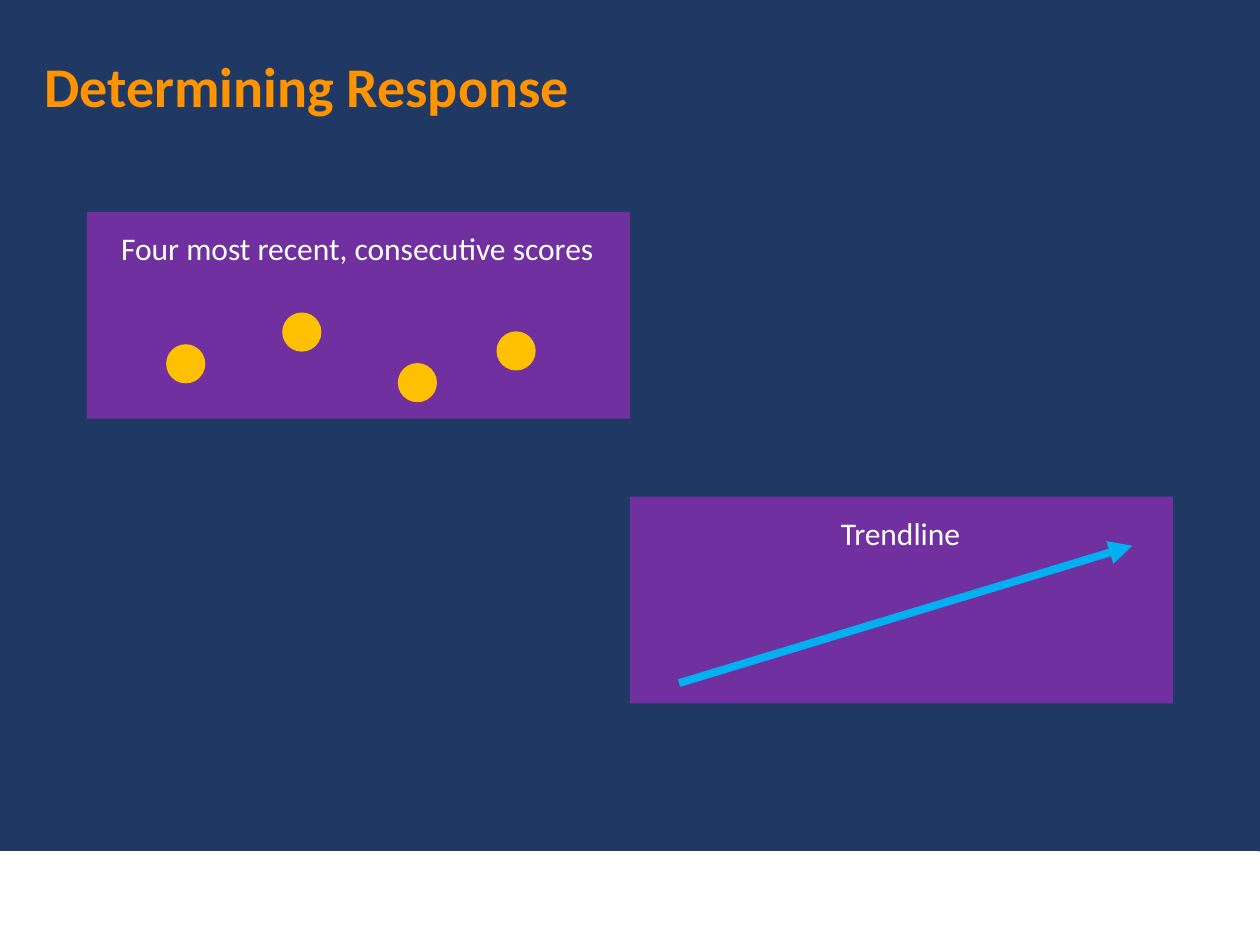
from lxml import etree
from pptx import Presentation
from pptx.dml.color import RGBColor
from pptx.enum import shapes, text
from pptx.oxml import ns
from pptx.util import Cm, Pt

NAVY = RGBColor(0x20, 0x38, 0x64)
ORANGE = RGBColor(0xFF, 0x93, 0x00)
PURPLE = RGBColor(0x70, 0x30, 0xA0)
GOLD = RGBColor(0xFF, 0xC0, 0x00)
BLUE = RGBColor(0x00, 0xB0, 0xF0)
WHITE = RGBColor(0xFF, 0xFF, 0xFF)
FONT = "Calibri"
PANEL_WIDTH, PANEL_HEIGHT = 10.95, 4.17
DOT_SIZE = 0.79
DOT_OFFSETS = [(1.6, 2.67), (3.94, 2.03), (6.27, 3.05), (8.26, 2.41)]


def add_filled_shape(container, kind, left, top, width, height, color):
    """Add a flat shape without outline, measured in centimetres."""
    shape = container.add_shape(kind, Cm(left), Cm(top), Cm(width), Cm(height))
    shape.shadow.inherit = False
    shape.fill.solid()
    shape.fill.fore_color.rgb = color
    shape.line.fill.background()
    return shape


def style_font(paragraph, size, color, bold=False):
    """Format every run of a paragraph."""
    for run in paragraph.runs:
        run.font.name = FONT
        run.font.size = Pt(size)
        run.font.bold = bold
        run.font.color.rgb = color


def add_title(slide, left, top, width, height):
    """Place and format the title placeholder."""
    title = slide.shapes.title
    title.left, title.top, title.width, title.height = map(Cm, (left, top, width, height))
    title.fill.solid()
    title.fill.fore_color.rgb = NAVY
    frame = title.text_frame
    frame.text = "Determining Response"
    frame.vertical_anchor = text.MSO_ANCHOR.MIDDLE
    paragraph = frame.paragraphs[0]
    paragraph.alignment = text.PP_ALIGN.LEFT
    paragraph.line_spacing = 1.1
    style_font(paragraph, 32, ORANGE, bold=True)


def add_footer_band(slide, left, top, width, height):
    """Draw the white band along the bottom edge."""
    band = add_filled_shape(slide.shapes, shapes.MSO_SHAPE.RECTANGLE,
                            left, top, width, height, WHITE)
    band.line.color.rgb = WHITE
    band.line.width = Pt(1)


def add_panel(slide, left, top, caption):
    """Add a grouped purple panel with a caption and return its shapes."""
    panel = slide.shapes.add_group_shape().shapes
    add_filled_shape(panel, shapes.MSO_SHAPE.RECTANGLE,
                     left, top, PANEL_WIDTH, PANEL_HEIGHT, PURPLE)
    label = panel.add_textbox(Cm(left + 0.38), Cm(top + 0.23),
                              Cm(PANEL_WIDTH - 0.8), Cm(1.02))
    label.text_frame.word_wrap = True
    label.text_frame.text = caption
    paragraph = label.text_frame.paragraphs[0]
    paragraph.alignment = text.PP_ALIGN.CENTER
    style_font(paragraph, 18, WHITE)
    return panel


def add_scores_panel(slide, left, top):
    """Draw the panel with the four score dots."""
    panel = add_panel(slide, left, top, "Four most recent, consecutive scores")
    for across, down in DOT_OFFSETS:
        add_filled_shape(panel, shapes.MSO_SHAPE.OVAL,
                         left + across, top + down, DOT_SIZE, DOT_SIZE, GOLD)


def add_trendline_panel(slide, left, top):
    """Draw the panel with the rising arrow."""
    panel = add_panel(slide, left, top, "Trendline")
    arrow = panel.add_connector(shapes.MSO_CONNECTOR.STRAIGHT,
                                Cm(left + 0.99), Cm(top + 3.76),
                                Cm(left + 10.13), Cm(top + 0.99))
    arrow.line.color.rgb = BLUE
    arrow.line.width = Pt(4.5)
    etree.SubElement(arrow.line._get_or_add_ln(), ns.qn("a:tailEnd"), type="triangle")
    etree.SubElement(arrow._element.spPr, ns.qn("a:effectLst"))


def main():
    """Build and save the presentation."""
    presentation = Presentation()
    presentation.slide_width, presentation.slide_height = Cm(25.4), Cm(19.05)
    slide = presentation.slides.add_slide(presentation.slide_layouts.get_by_name("Title Only"))
    slide.background.fill.solid()
    slide.background.fill.fore_color.rgb = NAVY
    add_footer_band(slide, 0, 17.17, 25.38, 1.88)
    add_title(slide, 0.64, 0.64, 24.13, 2.03)
    add_scores_panel(slide, 1.75, 4.27)
    add_trendline_panel(slide, 12.7, 10.01)
    presentation.save("out.pptx")


if __name__ == "__main__":
    main()
